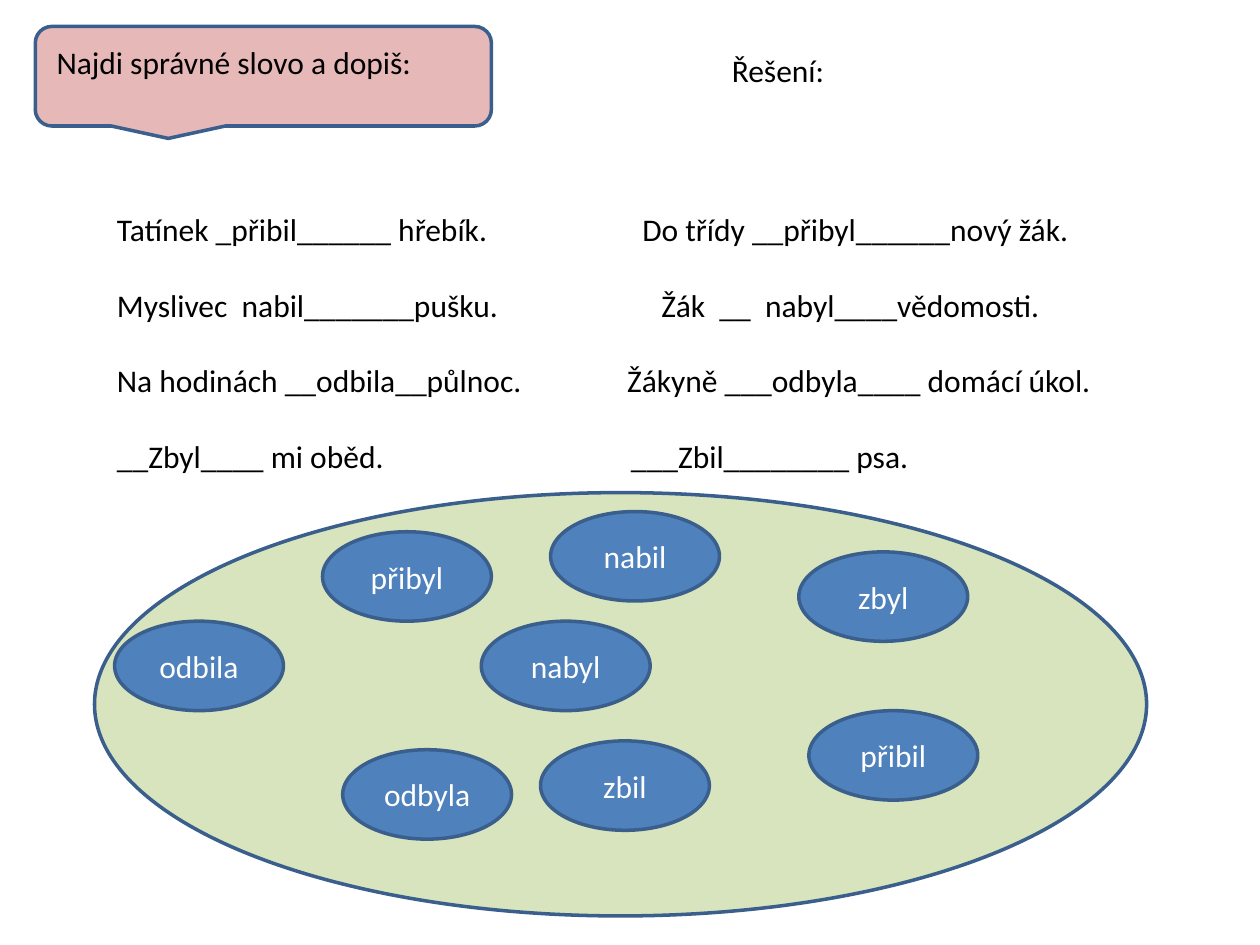
from lxml import etree
from pptx import Presentation
from pptx.dml.color import RGBColor
from pptx.enum.shapes import MSO_SHAPE
from pptx.enum.text import MSO_ANCHOR, MSO_AUTO_SIZE, PP_ALIGN
from pptx.oxml.ns import qn
from pptx.util import Inches, Pt

CALLOUT = MSO_SHAPE.ROUNDED_RECTANGULAR_CALLOUT
OVAL = MSO_SHAPE.OVAL
MIDDLE = MSO_ANCHOR.MIDDLE
FIT_SHAPE = MSO_AUTO_SIZE.SHAPE_TO_FIT_TEXT
CENTER = PP_ALIGN.CENTER

BLACK, WHITE = "000000", "FFFFFF"
PINK, GREEN, BLUE, OUTLINE = "E6B9B8", "D7E4BD", "4F81BD", "3A5F8C"
WORD_WIDTH, WORD_HEIGHT = 1.34, 0.71

# Left sentence, right sentence, and where the right one starts in the text
SENTENCES = [
    ("Tatínek _přibil______ hřebík.", "Do třídy __přibyl______nový žák.", 4.17),
    ("Myslivec  nabil_______pušku.", "Žák  __  nabyl____vědomosti.", 4.32),
    ("Na hodinách __odbila__půlnoc.", "Žákyně ___odbyla____ domácí úkol.", 4.05),
    ("__Zbyl____ mi oběd.", "___Zbil________ psa.", 4.08),
]

# Word and its offset from the top left of the big oval
WORDS = [
    ("nabyl", 3.07, 1.02),
    ("odbila", 0.16, 1.02),
    ("odbyla", 1.97, 2.04),
    ("přibyl", 1.81, 0.31),
    ("zbil", 3.54, 1.97),
    ("nabil", 3.62, 0.15),
    ("přibil", 5.67, 1.73),
    ("zbyl", 5.59, 0.47),
]


def rgb(value):
    return RGBColor.from_string(value)


def add_run(paragraph, text, color=BLACK):
    run = paragraph.add_run()
    run.text = text
    run.font.name = "Calibri"
    run.font.size = Pt(18)
    run.font.color.rgb = rgb(color)


def add_outlined_shape(slide, kind, left, top, width, height, fill):
    shape = slide.shapes.add_shape(
        kind, Inches(left), Inches(top), Inches(width), Inches(height))
    shape.shadow.inherit = False
    shape.fill.solid()
    shape.fill.fore_color.rgb = rgb(fill)
    shape.line.color.rgb = rgb(OUTLINE)
    shape.line.width = Pt(2)
    return shape


def add_text_frame(slide, left, top, width, height):
    box = slide.shapes.add_textbox(
        Inches(left), Inches(top), Inches(width), Inches(height))
    box.text_frame.word_wrap = True
    box.text_frame.auto_size = FIT_SHAPE
    return box.text_frame


def add_label(slide, left, top, width, height, text):
    frame = add_text_frame(slide, left, top, width, height)
    add_run(frame.paragraphs[0], text)


def add_task_callout(slide, left, top, width, height):
    add_outlined_shape(slide, CALLOUT, left, top, width, height, PINK)
    add_label(slide, left + 0.07, top + 0.08, 4.49, 0.4,
              "Najdi správné slovo a dopiš:")


def add_tab_stop(paragraph, position):
    properties = paragraph._p.get_or_add_pPr()
    tab_list = etree.SubElement(properties, qn("a:tabLst"))
    etree.SubElement(tab_list, qn("a:tab"), pos=str(Inches(position)), algn="l")


def add_sentences(slide, left, top, width, height):
    frame = add_text_frame(slide, left, top, width, height)
    for index, (first, second, position) in enumerate(SENTENCES):
        paragraph = frame.add_paragraph() if index else frame.paragraphs[0]
        if index:
            paragraph.space_before = Pt(21.5)
        add_tab_stop(paragraph, position)
        add_run(paragraph, f"{first}\t{second}")


def add_word_pool(slide, left, top, width, height):
    add_outlined_shape(slide, OVAL, left, top, width, height, GREEN)
    for word, across, down in WORDS:
        oval = add_outlined_shape(slide, OVAL, left + across, top + down,
                                  WORD_WIDTH, WORD_HEIGHT, BLUE)
        oval.text_frame.vertical_anchor = MIDDLE
        paragraph = oval.text_frame.paragraphs[0]
        paragraph.alignment = CENTER
        add_run(paragraph, word, WHITE)


def main():
    presentation = Presentation()
    presentation.slide_width = Inches(10)
    presentation.slide_height = Inches(7.5)
    slide = presentation.slides.add_slide(presentation.slide_layouts[6])
    add_task_callout(slide, 0.28, 0.21, 3.62, 0.79)
    add_word_pool(slide, 0.75, 3.91, 8.35, 3.36)
    add_sentences(slide, 0.83, 1.62, 8.74, 2.22)
    add_label(slide, 5.71, 0.36, 1.34, 0.4, "Řešení:")
    presentation.save("out.pptx")


if __name__ == "__main__":
    main()
